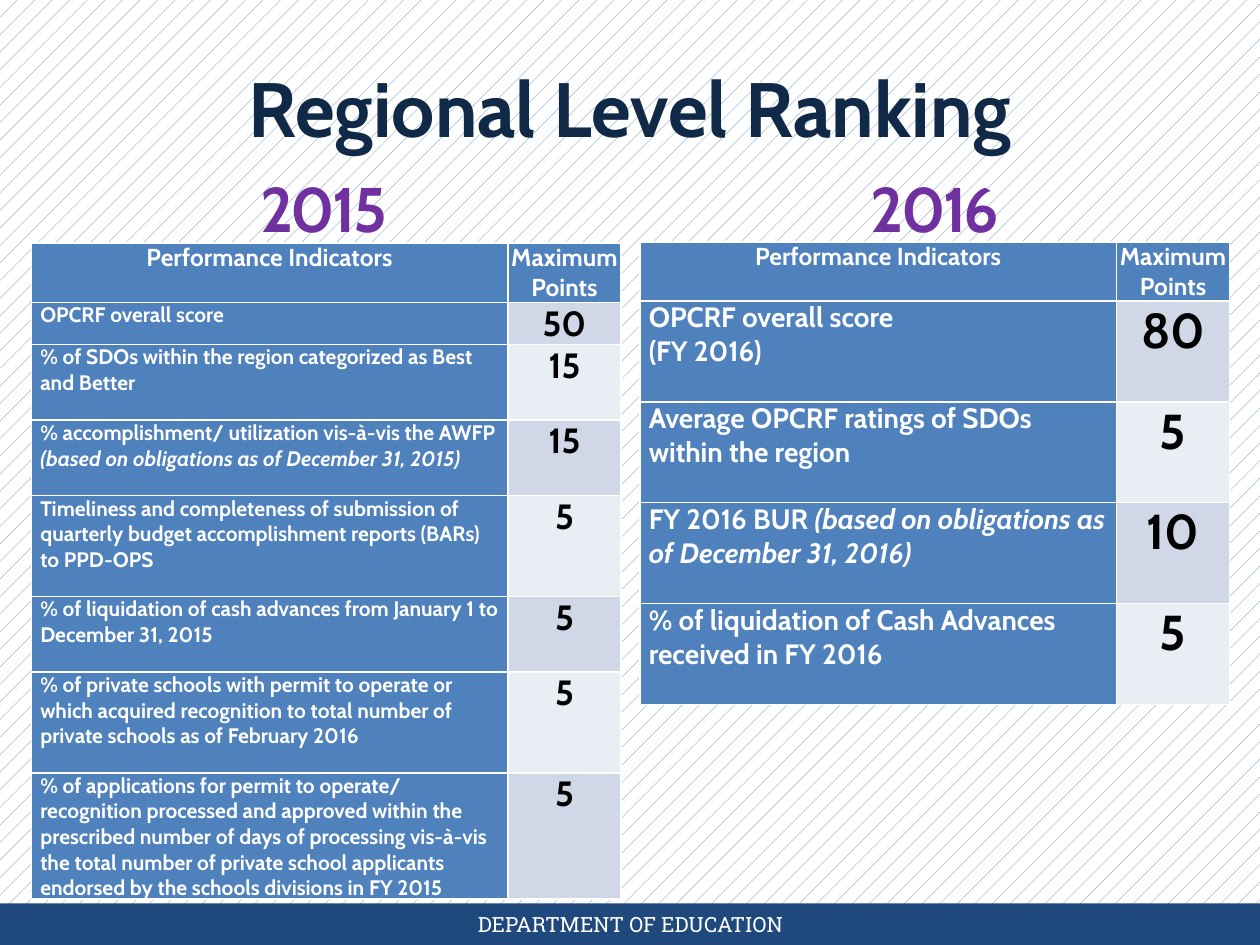
"""Build the slide that sets the 2015 and 2016 regional ranking criteria side by side."""
import pptx
import pptx.util
import pptx.dml.color
import pptx.enum.dml
import pptx.enum.shapes
import pptx.enum.text

HUES = {"blue": "4F81BD", "navy": "1F497D", "ink": "102947", "plum": "7030A0",
        "white": "FFFFFF", "black": "000000", "band": "D0D8E8", "pale": "E9EDF4"}
ALIGN = pptx.enum.text.PP_ALIGN
ANCHOR = pptx.enum.text.MSO_ANCHOR
FIT = pptx.enum.text.MSO_AUTO_SIZE
inch = pptx.util.Inches


def hue(name):
    return pptx.dml.color.RGBColor.from_string(HUES[name])


def write(frame, lines, size=12, color="white", font="Cabin", bold=True,
          align=ALIGN.CENTER, space=None, track=None):
    """Write one paragraph per line; a line is a list of (text, italic) runs."""
    frame.word_wrap = True
    if isinstance(lines, str):
        lines = [[(lines, False)]]
    for n, line in enumerate(lines):
        para = frame.paragraphs[0] if n == 0 else frame.add_paragraph()
        para.alignment = align
        if space:
            para.line_spacing = space
        for text, slant in line:
            run = para.add_run()
            run.text = text
            run.font.size = pptx.util.Pt(size)
            run.font.name = font
            run.font.bold = bold
            run.font.italic = slant
            run.font.color.rgb = hue(color)
            if track:
                run._r.get_or_add_rPr().set("spc", str(track))


deck = pptx.Presentation()
deck.slide_width, deck.slide_height = inch(10), inch(7.5)
wide = deck.slide_width
slide = deck.slides.add_slide(deck.slide_layouts[5])

back = slide.background.fill
back.patterned()
back.pattern = pptx.enum.dml.MSO_PATTERN.PERCENT_5
back.fore_color.rgb = hue("blue")
back.back_color.rgb = hue("white")

title = slide.shapes.title
title.left, title.top, title.width, title.height = 0, inch(0.43), wide, inch(0.84)
title.text_frame.auto_size = FIT.SHAPE_TO_FIT_TEXT
title.text_frame.vertical_anchor = ANCHOR.TOP
write(title.text_frame, "Regional Level Ranking", size=44, color="ink")

foot = inch(0.33)
bar = slide.shapes.add_shape(pptx.enum.shapes.MSO_SHAPE.RECTANGLE,
                             0, deck.slide_height - foot, wide, foot)
bar.shadow.inherit = False
bar.fill.solid()
bar.fill.fore_color.rgb = hue("navy")
bar.line.fill.background()
label = slide.shapes.add_textbox(inch(3.42), bar.top, inch(3.17), foot)
label.text_frame.vertical_anchor = ANCHOR.MIDDLE
write(label.text_frame, "DEPARTMENT OF EDUCATION", font="Roboto Slab", bold=False)

# rows: (indicator, points, height)
PANELS = [
    dict(year="2015", head=1.67, left=0.25, top=1.93, size=12, mark=20, rows=[
        ("OPCRF overall score", 50, 0.33),
        ("% of SDOs within the region categorized as Best and Better", 15, 0.6),
        ([[("% accomplishment/ utilization vis-à-vis the AWFP", False)],
          [("(based on obligations as of December 31, 2015)", True)]], 15, 0.6),
        ("Timeliness and completeness of submission of quarterly budget "
         "accomplishment reports (BARs) to PPD-OPS", 5, 0.8),
        ("% of liquidation of cash advances from January 1 to December 31, 2015", 5, 0.6),
        ("% of private schools with permit to operate or which acquired recognition "
         "to total number of private schools as of February 2016", 5, 0.8),
        ("% of applications for permit to operate/ recognition processed and approved "
         "within the prescribed number of days of processing vis-à-vis the total number "
         "of private school applicants endorsed by the schools divisions in FY 2015", 5, 1),
    ]),
    dict(year="2016", head=6.52, left=5.08, top=1.92, size=16, mark=28, rows=[
        ([[("OPCRF overall score", False)], [("(FY 2016)", False)]], 80, 0.8),
        ("Average OPCRF ratings of SDOs within the region", 5, 0.8),
        ([[("FY 2016 BUR ", False),
           ("(based on obligations as of December 31, 2016)", True)]], 10, 0.8),
        ("% of liquidation of Cash Advances received in FY 2016", 5, 0.8),
    ]),
]
COLS = [3.78, 0.9]

for panel in PANELS:
    year = slide.shapes.add_textbox(inch(panel["head"]), inch(1.41), inch(1.8), inch(0.59))
    year.text_frame.auto_size = FIT.SHAPE_TO_FIT_TEXT
    write(year.text_frame, panel["year"], size=36, color="plum", space=0.8, track=-150)

    rows = [("Performance Indicators", "Maximum Points", 0.47)] + panel["rows"]
    grid = slide.shapes.add_table(
        len(rows), len(COLS), inch(panel["left"]), inch(panel["top"]),
        inch(sum(COLS)), inch(sum(row[2] for row in rows))).table
    for col, width in zip(grid.columns, COLS):
        col.width = inch(width)
    for r, (name, points, height) in enumerate(rows):
        grid.rows[r].height = inch(height)
        for c, text in enumerate((name, points)):
            cell = grid.cell(r, c)
            cell.margin_top = cell.margin_bottom = 0
            cell.margin_left = cell.margin_right = inch(0.07 if r else 0.02)
            cell.fill.solid()
            if r == 0:
                shade, form = "blue", dict(size=14)
            elif c == 0:
                shade, form = "blue", dict(size=panel["size"], align=ALIGN.LEFT)
            else:
                shade = "band" if r % 2 else "pale"
                form = dict(size=panel["mark"], color="black")
            cell.fill.fore_color.rgb = hue(shade)
            write(cell.text_frame, str(text) if c else text, **form)

deck.save("out.pptx")
